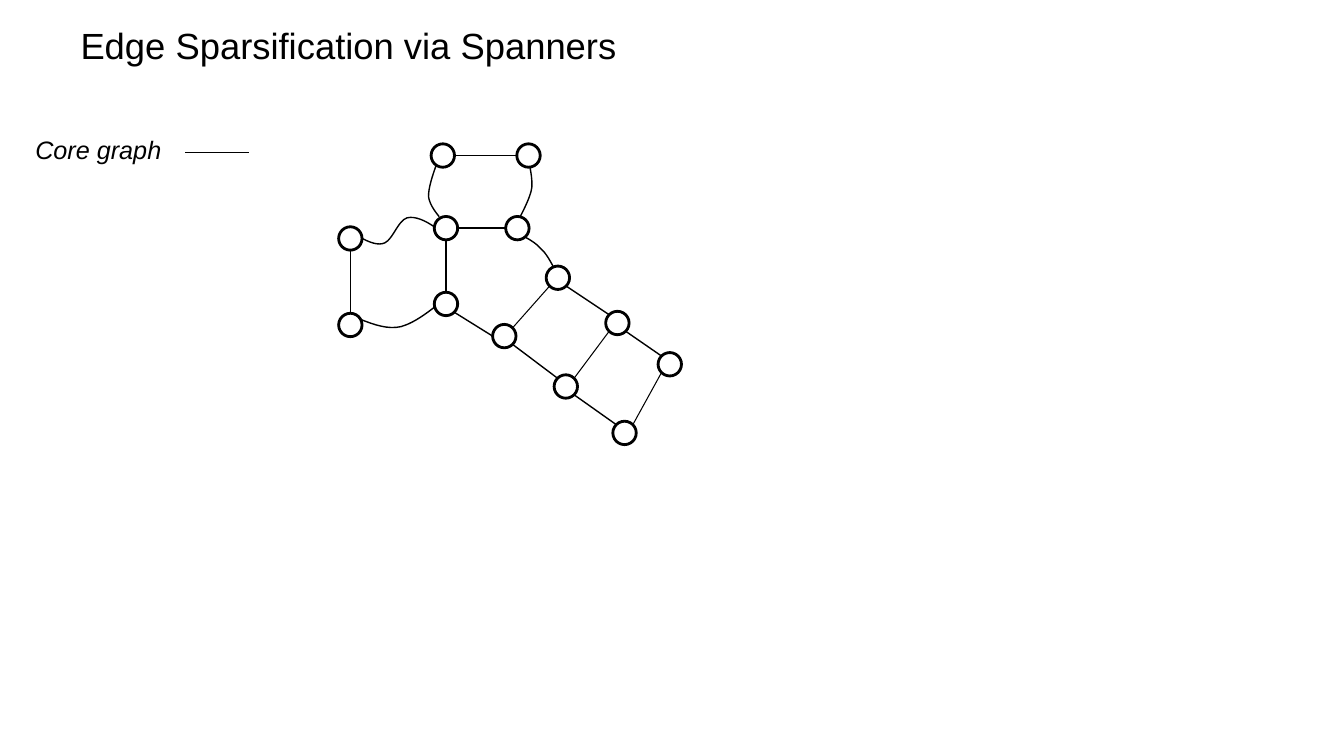
from math import cos, radians, sin

from lxml import etree
from pptx import Presentation
from pptx.dml.color import RGBColor
from pptx.enum.shapes import MSO_CONNECTOR, MSO_SHAPE
from pptx.enum.text import MSO_ANCHOR, MSO_AUTO_SIZE
from pptx.oxml.ns import qn
from pptx.util import Cm, Pt

STRAIGHT = MSO_CONNECTOR.STRAIGHT
OVAL = MSO_SHAPE.OVAL
TOP = MSO_ANCHOR.TOP
GROW, FIXED = MSO_AUTO_SIZE.SHAPE_TO_FIT_TEXT, MSO_AUTO_SIZE.NONE

# Content: lengths in centimetres, line widths in points
COLORS = {"ink": "000000", "paper": "FFFFFF"}
FONT = "Arial"
NODE_SIZE = 0.59
THIN, NORMAL, THICK = 0.75, 1, 2

TEXTS = [
    {"text": "Edge Sparsification via Spanners", "at": (2.03, 0.71, 29.79, 2.49),
     "font": {"size": Pt(26), "italic": False}, "spacing": 0.9, "inset": (0, 0), "fit": FIXED},
    {"text": "Core graph", "at": (0.64, 3.25, 6.58, 1.02),
     "font": {"size": Pt(18), "italic": True}, "spacing": 1.0, "inset": (0.25, 0.13), "fit": GROW},
]
LEGEND_LINE = ((4.67, 3.84), (6.27, 3.84))

# Node centres
NODES = {
    "left top": (8.83, 6.01), "left bottom": (8.83, 8.19),
    "top left": (11.16, 3.92), "top right": (13.32, 3.92),
    "hub": (11.24, 5.75), "hub right": (13.04, 5.75), "hub bottom": (11.24, 7.66),
    "upper 1": (14.06, 7.0), "upper 2": (15.56, 8.14), "upper 3": (16.88, 9.18),
    "lower 1": (12.71, 8.47), "lower 2": (14.26, 9.74), "lower 3": (15.74, 10.91),
}

# Straight edges: node, side, node, side, width
EDGES = [
    ("hub right", "W", "hub", "E", NORMAL),
    ("top left", "E", "top right", "W", THIN),
    ("left top", "S", "left bottom", "N", THIN),
    ("hub bottom", "N", "hub", "S", NORMAL),
    ("lower 1", "W", "hub bottom", "SE", NORMAL),
    ("lower 2", "NW", "lower 1", "SE", NORMAL),
    ("lower 3", "NW", "lower 2", "SE", NORMAL),
    ("upper 2", "NW", "upper 1", "SE", NORMAL),
    ("upper 3", "NW", "upper 2", "SE", NORMAL),
    ("upper 1", "SW", "lower 1", "NE", THIN),
    ("upper 2", "SW", "lower 2", "NE", THIN),
    ("upper 3", "SW", "lower 3", "NE", THIN),
]
SIDES = ("E", "SE", "S", "SW", "W", "NW", "N", "NE")

# Curved edges: a start point, then three Bezier points per segment
CURVES = [
    [(9.09, 8.05), (9.42, 8.18), (9.78, 8.31), (10.11, 8.23),
     (10.46, 8.13), (10.82, 7.85), (11.2, 7.54)],
    [(9.09, 5.99), (9.3, 6.1), (9.53, 6.2), (9.7, 6.12),
     (9.91, 6.02), (10.03, 5.56), (10.26, 5.49),
     (10.46, 5.44), (10.72, 5.56), (10.95, 5.72)],
    [(11.02, 4.09), (10.9, 4.42), (10.8, 4.72), (10.8, 4.95),
     (10.82, 5.18), (11.07, 5.46), (11.07, 5.46)],
    [(13.11, 5.46), (13.23, 5.23), (13.34, 5.0), (13.39, 4.8),
     (13.44, 4.6), (13.36, 4.24), (13.36, 4.24)],
    [(13.94, 6.71), (13.84, 6.53), (13.74, 6.35), (13.61, 6.25),
     (13.51, 6.12), (13.26, 5.99), (13.26, 5.99)],
]


def color(name):
    return RGBColor.from_string(COLORS[name])


def to_cm(values):
    return [Cm(value) for value in values]


def set_line(shape, width):
    shape.line.color.rgb = color("ink")
    shape.line.width = Pt(width)


def node_side(name, side):
    angle = radians(45 * SIDES.index(side))
    x, y = NODES[name]
    return x + NODE_SIZE / 2 * cos(angle), y + NODE_SIZE / 2 * sin(angle)


def add_edge(shapes, start, end, width):
    edge = shapes.add_connector(STRAIGHT, *to_cm(start), *to_cm(end))
    set_line(edge, width)
    etree.SubElement(edge.element.spPr, qn("a:effectLst"))


def add_curve(shapes, points):
    builder = shapes.build_freeform(*to_cm(points[0]))
    builder.add_line_segments([to_cm(point) for point in points[1:]], close=False)
    curve = builder.convert_to_shape()
    curve.shadow.inherit = False
    curve.fill.background()
    set_line(curve, NORMAL)
    # Turn each run of three line segments into one Bezier segment
    steps = list(curve.element.iter(qn("a:lnTo")))
    for first in range(0, len(steps), 3):
        bezier = etree.Element(qn("a:cubicBezTo"))
        steps[first].addprevious(bezier)
        for step in steps[first:first + 3]:
            bezier.append(step[0])
            step.getparent().remove(step)


def add_node(shapes, center):
    corner = [value - NODE_SIZE / 2 for value in center]
    node = shapes.add_shape(OVAL, *to_cm(corner), Cm(NODE_SIZE), Cm(NODE_SIZE))
    node.shadow.inherit = False
    node.fill.solid()
    node.fill.fore_color.rgb = color("paper")
    set_line(node, THICK)


def add_text(shapes, item):
    box = shapes.add_textbox(*to_cm(item["at"]))
    frame = box.text_frame
    across, down = to_cm(item["inset"])
    layout = {"word_wrap": True, "auto_size": item["fit"], "vertical_anchor": TOP,
              "margin_left": across, "margin_right": across,
              "margin_top": down, "margin_bottom": down}
    for key, value in layout.items():
        setattr(frame, key, value)
    para = frame.paragraphs[0]
    para.line_spacing = item["spacing"]
    span = para.add_run()
    span.text = item["text"]
    for key, value in {"name": FONT, **item["font"]}.items():
        setattr(span.font, key, value)
    span.font.color.rgb = color("ink")


def main():
    deck = Presentation()
    deck.slide_width, deck.slide_height = Cm(33.87), Cm(19.05)
    page = deck.slides.add_slide(deck.slide_layouts[6])

    # Title and legend
    for item in TEXTS:
        add_text(page.shapes, item)
    add_edge(page.shapes, *LEGEND_LINE, THIN)

    # Graph: edges behind, nodes in front
    graph = page.shapes.add_group_shape().shapes
    for start, start_side, end, end_side, width in EDGES:
        add_edge(graph, node_side(start, start_side), node_side(end, end_side), width)
    for points in CURVES:
        add_curve(graph, points)
    for center in NODES.values():
        add_node(graph, center)

    deck.save("out.pptx")


if __name__ == "__main__":
    main()
